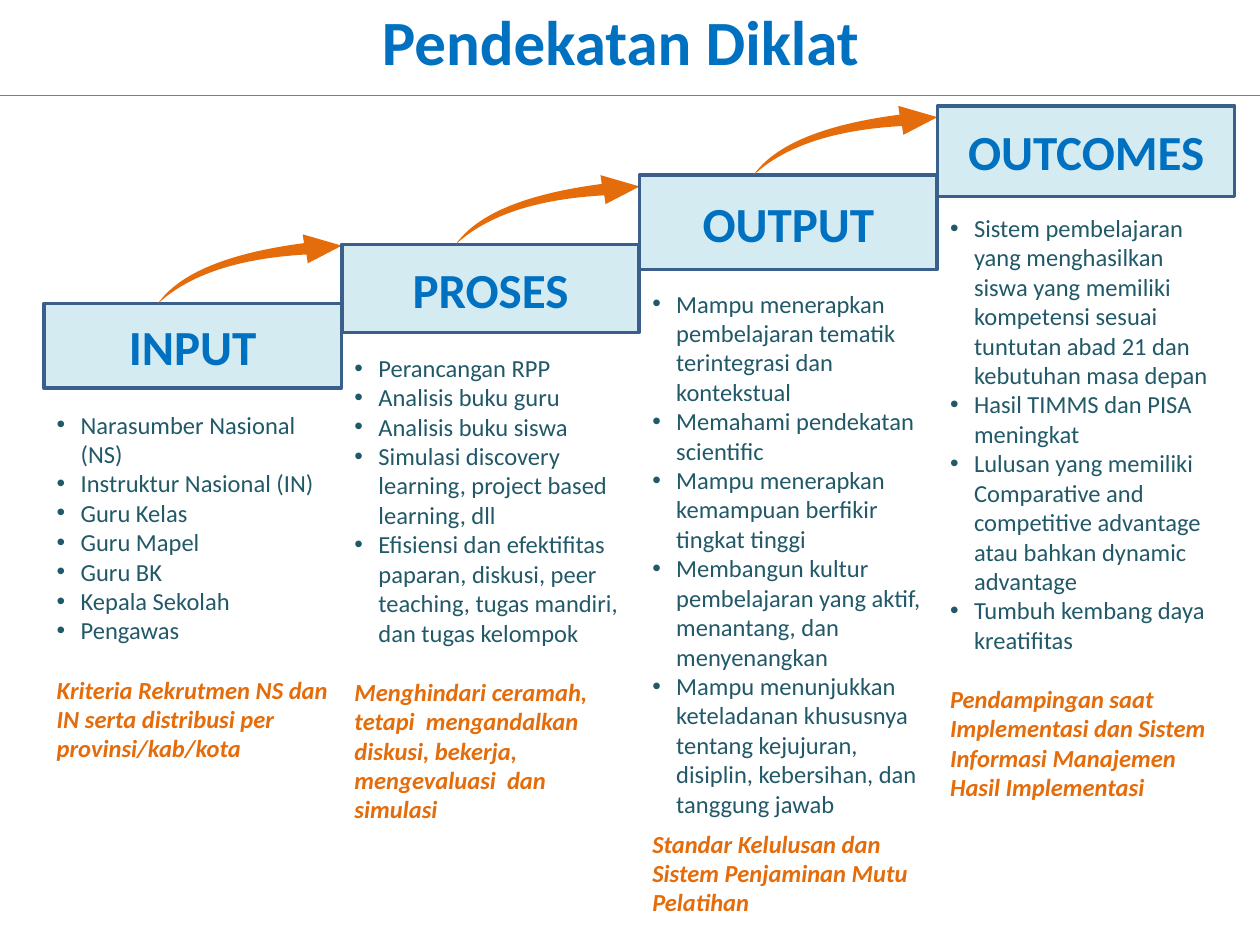
from lxml.etree import SubElement
from pptx import Presentation
from pptx.dml.color import RGBColor
from pptx.enum.shapes import MSO_CONNECTOR, MSO_SHAPE
from pptx.enum.text import MSO_ANCHOR as Anchor, MSO_AUTO_SIZE as AutoSize, PP_ALIGN as Align
from pptx.oxml.ns import qn
from pptx.util import Inches, Pt

BLUE = RGBColor(0x00, 0x70, 0xC0)
TEAL = RGBColor(0x21, 0x59, 0x68)
ORANGE = RGBColor(0xE4, 0x6C, 0x0A)
AQUA = RGBColor(0x93, 0xCD, 0xDD)
NAVY = RGBColor(0x3A, 0x5F, 0x8C)
GRAY = RGBColor(0x7F, 0x7F, 0x7F)
FONT = "Calibri"

FIRST_X, LAST_X, STEP_W = 0.35, 7.44, 2.36
ARROW_W, ARROW_H = 1.46, 0.55
INDENT = 0.19

STAGES = [
    dict(name="INPUT", top=2.41, height=0.67, list_top=3.2, list_height=3.14, gap=17,
         items=["Narasumber Nasional (NS)", "Instruktur Nasional (IN)", "Guru Kelas",
                "Guru Mapel", "Guru BK", "Kepala Sekolah", "Pengawas"],
         note="Kriteria Rekrutmen NS dan IN serta distribusi per provinsi/kab/kota"),
    dict(name="PROSES", top=1.94, height=0.7, list_top=2.75, list_height=3.85, gap=17,
         items=["Perancangan RPP", "Analisis buku guru", "Analisis buku siswa",
                "Simulasi discovery learning, project based learning, dll",
                "Efisiensi dan efektifitas paparan, diskusi, peer teaching, "
                "tugas mandiri, dan tugas kelompok"],
         note="Menghindari ceramah, tetapi  mengandalkan diskusi, bekerja, "
              "mengevaluasi  dan simulasi"),
    dict(name="OUTPUT", top=1.39, height=0.75, list_top=2.24, list_height=5.13, gap=6,
         items=["Mampu menerapkan pembelajaran tematik terintegrasi dan kontekstual",
                "Memahami pendekatan scientific",
                "Mampu menerapkan kemampuan berfikir tingkat tinggi",
                "Membangun kultur pembelajaran yang aktif, menantang, dan menyenangkan",
                "Mampu menunjukkan keteladanan khususnya tentang kejujuran, disiplin, "
                "kebersihan, dan tanggung jawab"],
         note="Standar Kelulusan dan Sistem Penjaminan Mutu Pelatihan"),
    dict(name="OUTCOMES", top=0.84, height=0.72, list_top=1.64, list_height=4.71, gap=17,
         items=["Sistem pembelajaran yang menghasilkan siswa yang memiliki kompetensi "
                "sesuai tuntutan abad 21 dan kebutuhan masa depan",
                "Hasil TIMMS dan PISA meningkat",
                "Lulusan yang memiliki Comparative and competitive advantage "
                "atau bahkan dynamic advantage",
                "Tumbuh kembang daya kreatifitas"],
         note="Pendampingan saat Implementasi dan Sistem Informasi Manajemen  Hasil Implementasi"),
]


def place(s, x, y, w, h):
    s.left, s.top, s.width, s.height = Inches(x), Inches(y), Inches(w), Inches(h)


def add_run(p, text, size, color, bold=False, italic=False):
    r = p.add_run()
    r.text = text
    f = r.font
    f.name, f.size, f.bold, f.italic = FONT, Pt(size), bold, italic
    f.color.rgb = color


def set_bullet(p, char=None):
    pPr = p._p.get_or_add_pPr()
    indent = Inches(INDENT) if char else 0
    pPr.set("marL", str(indent))
    pPr.set("indent", str(-indent))
    if char:
        SubElement(pPr, qn("a:buFont"), typeface="Arial")
        SubElement(pPr, qn("a:buChar"), char=char)
    else:
        SubElement(pPr, qn("a:buNone"))


def add_header(sp, title, x, y, w, h):
    place(title, x, y, w, h)
    tf = title.text_frame
    tf.auto_size, tf.vertical_anchor = AutoSize.NONE, Anchor.TOP
    tf.margin_right = Inches(0.33)
    p = tf.paragraphs[0]
    p.alignment = Align.CENTER
    add_run(p, "Pendekatan Diklat", 36, BLUE, bold=True)
    rule_y = Inches(y + 0.79)
    rule = sp.add_connector(MSO_CONNECTOR.STRAIGHT, 0, rule_y, Inches(10), rule_y)
    rule.line.color.rgb, rule.line.width = GRAY, Pt(0.75)
    SubElement(rule._element.spPr, qn("a:effectLst"))


def add_step(sp, name, x, y, w, h):
    s = sp.add_shape(MSO_SHAPE.RECTANGLE, Inches(x), Inches(y), Inches(w), Inches(h))
    s.shadow.inherit = False
    s.fill.solid()
    s.fill.fore_color.rgb = AQUA
    color = s._element.spPr.find(qn("a:solidFill"))[0]
    SubElement(color, qn("a:alpha"), val="40000")
    s.line.color.rgb, s.line.width = NAVY, Pt(2)
    tf = s.text_frame
    tf.word_wrap, tf.vertical_anchor = True, Anchor.MIDDLE
    p = tf.paragraphs[0]
    p.alignment = Align.CENTER
    add_run(p, name, 28, BLUE, bold=True)


def fill_list(body, stage, x, y, w, h):
    place(body, x, y, w, h)
    tf = body.text_frame
    tf.word_wrap, tf.auto_size, tf.vertical_anchor = True, AutoSize.NONE, Anchor.TOP
    for i, text in enumerate(stage["items"] + [stage["note"]]):
        p = tf.add_paragraph() if i else tf.paragraphs[0]
        is_note = i == len(stage["items"])
        p.alignment, p.line_spacing = Align.LEFT, 1.0
        p.space_before, p.space_after = Pt(stage["gap"] if is_note else 0), Pt(0)
        set_bullet(p, None if is_note else "•")
        add_run(p, text, 14, ORANGE if is_note else TEAL, bold=is_note, italic=is_note)


def merge_to_curve(segments):
    first = segments[0]
    bezier = first.makeelement(qn("a:cubicBezTo"))
    first.addprevious(bezier)
    for segment in segments:
        bezier.append(segment[0])
        segment.getparent().remove(segment)


def add_arrow(sp, x, y, w, h):
    tail = (0, h)
    outer = [(0.17, 0.31), (0.55, 0.15), (1.16, 0.07)]
    head = [(1.15, 0), (w, 0.09), (1.19, 0.23), (1.18, 0.16)]
    inner = [(0.64, 0.19), (0.25, 0.32), tail]
    fb = sp.build_freeform(Inches(x), Inches(y + h), scale=1.0)
    fb.add_line_segments([(Inches(x + px), Inches(y + py)) for px, py in outer + head + inner],
                         close=True)
    s = fb.convert_to_shape()
    segments = list(s._element.spPr.iter(qn("a:lnTo")))
    merge_to_curve(segments[:3])
    merge_to_curve(segments[7:10])
    s.shadow.inherit = False
    s.fill.solid()
    s.fill.fore_color.rgb = ORANGE
    s.line.fill.background()


def main():
    prs = Presentation()
    prs.slide_width, prs.slide_height = Inches(10), Inches(7.5)
    slide = prs.slides.add_slide(prs.slide_layouts.get_by_name("Comparison"))
    sp = slide.shapes
    title, *bodies = slide.placeholders
    pitch = (LAST_X - FIRST_X) / (len(STAGES) - 1)
    add_header(sp, title, 0.08, -0.03, 9.92, 0.71)
    for i, (stage, body) in enumerate(zip(STAGES, bodies)):
        x = FIRST_X + i * pitch
        add_step(sp, stage["name"], x, stage["top"], STEP_W, stage["height"])
        fill_list(body, stage, x, stage["list_top"], STEP_W, stage["list_height"])
        if i < len(STAGES) - 1:
            add_arrow(sp, x + pitch - ARROW_W, stage["top"] - ARROW_H, ARROW_W, ARROW_H)
    prs.save("out.pptx")


if __name__ == "__main__":
    main()
